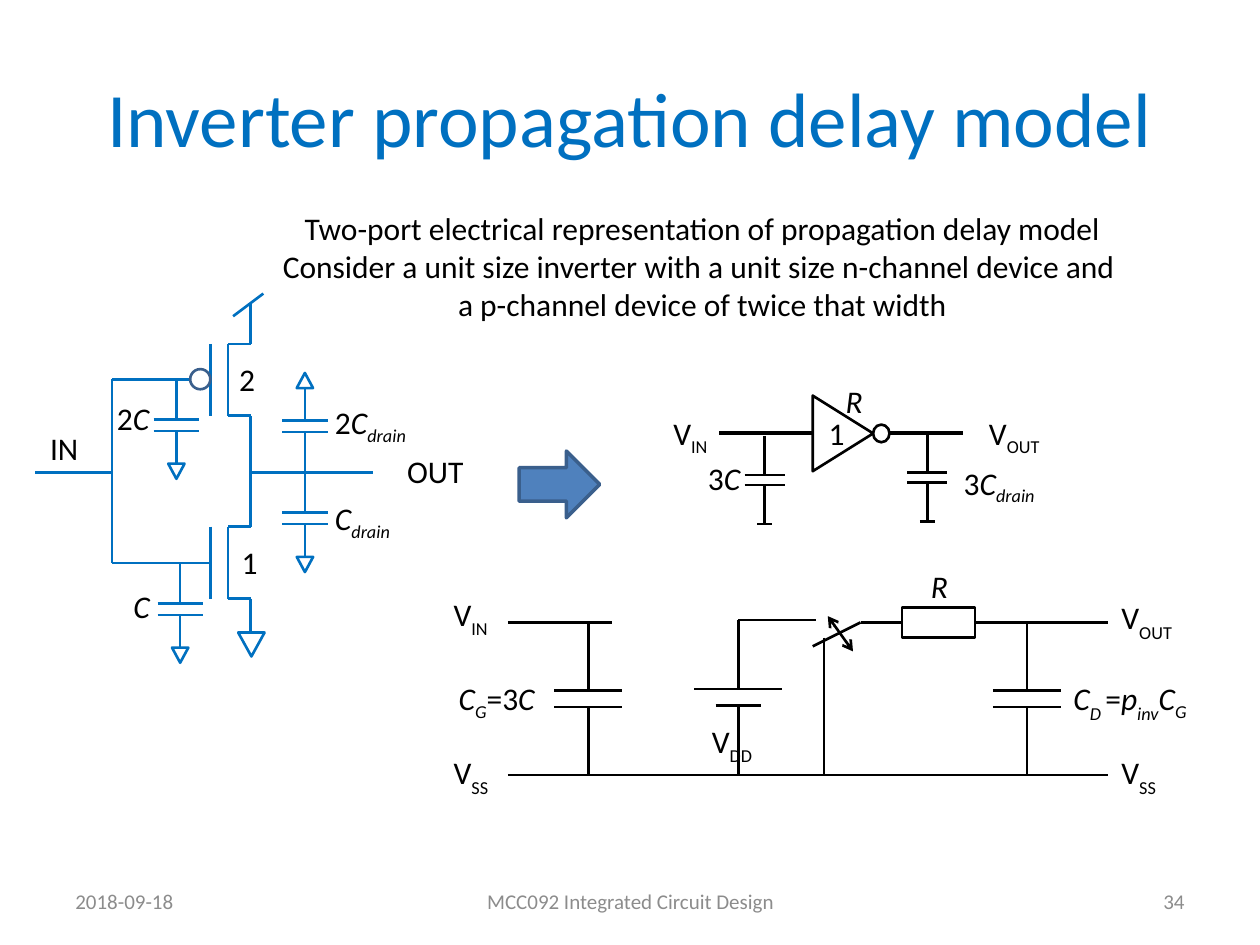
from dataclasses import dataclass
from typing import Any

from lxml import etree
from pptx import Presentation
from pptx import util as u
from pptx.dml.color import RGBColor
from pptx.enum import shapes, text
from pptx.oxml import ns

BLUE, BLACK, WHITE, GREY = "0070C0", "000000", "FFFFFF", "8C8C8C"
ARROW_FILL, ARROW_EDGE = "4F81BD", "3A5F8C"
LEFT, CENTER, RIGHT = text.PP_ALIGN.LEFT, text.PP_ALIGN.CENTER, text.PP_ALIGN.RIGHT
PRESET = shapes.MSO_SHAPE


def color(value):
    """Turn a hex string into a colour."""
    return RGBColor.from_string(value)


def italic(words):
    """Describe an italic run."""
    return words, True, 0


def sub(words, slanted=False, drop=25):
    """Describe a subscript run."""
    return words, slanted, drop


@dataclass
class Region:
    """A part of the slide whose contents are placed from its top left corner."""

    slide: Any
    left: float
    top: float
    ink: str = BLACK

    def at(self, x, y):
        """Return the slide position of a point in the region."""
        return u.Inches(self.left + x), u.Inches(self.top + y)

    def wire(self, x1, y1, x2, y2, width=1.5):
        """Draw a straight wire between two points."""
        wire = self.slide.shapes.add_connector(
            shapes.MSO_CONNECTOR.STRAIGHT, *self.at(x1, y1), *self.at(x2, y2))
        wire.line.color.rgb = color(self.ink)
        wire.line.width = u.Pt(width)
        etree.SubElement(wire._element.spPr, ns.qn("a:effectLst"))
        return wire

    def symbol(self, preset, x, y, width, height, turn=0, fill=WHITE, edge=None, weight=1.5):
        """Draw a filled preset shape."""
        symbol = self.slide.shapes.add_shape(
            preset, *self.at(x, y), u.Inches(width), u.Inches(height))
        symbol.rotation = turn
        symbol.shadow.inherit = False
        symbol.fill.solid()
        symbol.fill.fore_color.rgb = color(fill)
        symbol.line.color.rgb = color(edge or self.ink)
        symbol.line.width = u.Pt(weight)
        return symbol

    def label(self, lines, x, y, width, height=0.4, align=LEFT, pad=0.1, size=18,
              ink=BLACK, anchor=text.MSO_ANCHOR.TOP):
        """Write lines made of plain strings and styled runs."""
        frame = self.slide.shapes.add_textbox(
            *self.at(x, y), u.Inches(width), u.Inches(height)).text_frame
        frame.word_wrap = True
        frame.vertical_anchor = anchor
        frame.margin_left = frame.margin_right = u.Inches(pad)
        frame.margin_top = frame.margin_bottom = u.Inches(pad / 2)
        for index, pieces in enumerate(lines):
            paragraph = frame.add_paragraph() if index else frame.paragraphs[0]
            paragraph.alignment = align
            paragraph.font.size = u.Pt(size)
            paragraph.font.name = "Calibri"
            paragraph.font.color.rgb = color(ink)
            for piece in pieces:
                words, slanted, drop = (piece, False, 0) if isinstance(piece, str) else piece
                run = paragraph.add_run()
                run.text = words
                if slanted:
                    run.font.italic = True
                if drop:
                    run._r.get_or_add_rPr().set("baseline", str(-1000 * drop))

    def capacitor(self, x, y, half, lead, gap, far_half=None, way=1):
        """Draw two plates with leads, starting at y, and return the far end."""
        near, far = y + way * lead, y + way * (lead + gap)
        end = far + way * lead
        far_half = far_half or half
        self.wire(x - half, near, x + half, near)
        self.wire(x - far_half, far, x + far_half, far)
        self.wire(x, y, x, near)
        self.wire(x, far, x, end)
        return end

    def grounded_capacitor(self, x, y, way=1):
        """Draw a capacitor that ends in a triangle."""
        end = self.capacitor(x, y, 0.18, 0.32, 0.09, way=way)
        self.symbol(PRESET.ISOSCELES_TRIANGLE, x - 0.065, end - 0.06, 0.13, 0.12,
                    turn=180 if way > 0 else 0)

    def load_capacitor(self, x, y):
        """Draw a capacitor that ends in a short bar."""
        end = self.capacitor(x, y, 0.16, 0.31, 0.08)
        self.wire(x - 0.06, end, x + 0.06, end)

    def transistor(self, y):
        """Draw the gate, the channel and the two terminals of a device."""
        for x in (1.39, 1.53):
            self.wire(x, y, x, y + 0.57)
        for terminal in (y, y + 0.57):
            self.wire(1.53, terminal, 1.71, terminal)


def add_title(slide, left, top, width, height):
    """Place and format the title."""
    title = slide.shapes.title
    title.left, title.top = u.Inches(left), u.Inches(top)
    title.width, title.height = u.Inches(width), u.Inches(height)
    title.text_frame.text = "Inverter propagation delay model"
    title.text_frame.vertical_anchor = text.MSO_ANCHOR.MIDDLE
    heading = title.text_frame.paragraphs[0]
    heading.alignment = CENTER
    heading.font.size = u.Pt(44)
    heading.font.name = "Calibri"
    heading.font.color.rgb = color(BLUE)


def add_footer(slide, left, top):
    """Write the date, the course and the page number."""
    footer = Region(slide, left, top)
    for words, x, width, align in (
            ("2018-09-18", 0, 2.33, LEFT),
            ("MCC092 Integrated Circuit Design", 2.92, 3.17, CENTER),
            ("34", 6.67, 2.33, RIGHT)):
        footer.label([[words]], x, 0, width, align=align, size=12, ink=GREY,
                     anchor=text.MSO_ANCHOR.MIDDLE)


def add_intro(slide, left, top):
    """Write the three introductory lines."""
    Region(slide, left, top).label([
        ["Two-port electrical representation of propagation delay model"],
        ["Consider a unit size inverter with a unit size n-channel device and "],
        ["a p-channel device of twice that width"],
    ], 0, 0, 6.89, 0.91, CENTER, pad=0)


def add_cmos_inverter(slide, left, top):
    """Draw the inverter at transistor level."""
    cmos = Region(slide, left, top, BLUE)
    for y in (0.4, 1.85):
        cmos.transistor(y)
    for ends in ((1.57, 0.18, 1.81, 0), (1.71, 0.08, 1.71, 0.4), (1.71, 0.97, 1.71, 1.85),
                 (1.71, 2.42, 1.71, 2.81), (0.61, 0.68, 1.39, 0.68), (0.61, 2.14, 1.39, 2.14),
                 (0.61, 0.68, 0.61, 2.14), (0, 1.42, 0.61, 1.42), (1.71, 1.42, 2.68, 1.42)):
        cmos.wire(*ends)
    cmos.symbol(PRESET.ISOSCELES_TRIANGLE, 1.61, 2.69, 0.21, 0.19, turn=180)
    cmos.symbol(PRESET.OVAL, 1.23, 0.6, 0.16, 0.16, edge=ARROW_EDGE)
    for x, y, way in ((1.15, 2.14, 1), (1.12, 0.68, 1), (2.14, 1.42, 1), (2.14, 1.42, -1)):
        cmos.grounded_capacitor(x, y, way)
    drain = [italic("C"), sub("drain", True)]
    cmos.label([["IN"]], -0.07, 1.03, 0.6, align=CENTER)
    cmos.label([["OUT"]], 2.78, 1.21, 0.79, align=CENTER)
    for pieces, x, y in ((["2"], 1.52, 0.48), (["1"], 1.54, 1.93),
                         (["2", italic("C")], 0.55, 0.79), ([italic("C")], 0.68, 2.28),
                         (["2", *drain], 2.28, 0.82), (drain, 2.28, 1.58)):
        cmos.label([pieces], x, y, 0.95)


def add_step_arrow(slide, left, top):
    """Draw the block arrow from the circuit to its models."""
    Region(slide, left, top).symbol(PRESET.RIGHT_ARROW, 0, 0, 0.64, 0.53,
                                    fill=ARROW_FILL, edge=ARROW_EDGE, weight=2)


def add_gate_model(slide, left, top):
    """Draw the logic symbol with its input and output loads."""
    gate = Region(slide, left, top)
    gate.wire(0.55, 0.41, 2.48, 0.41, 2.25)
    gate.symbol(PRESET.ISOSCELES_TRIANGLE, 1.23, 0.17, 0.6, 0.48, turn=90)
    gate.symbol(PRESET.OVAL, 1.77, 0.34, 0.13, 0.14)
    gate.load_capacitor(2.2, 0.41)
    gate.load_capacitor(0.91, 0.43)
    for pieces, x, y in ((["V", sub("IN")], -0.08, 0.21), (["V", sub("OUT")], 2.49, 0.21),
                         (["1"], 1.08, 0.21), ([italic("R")], 1.22, -0.05)):
        gate.label([pieces], x, y, 0.8, align=CENTER)
    gate.label([["3", italic("C")]], 0.36, 0.56, 0.55)
    gate.label([["3", italic("C"), sub("drain", True)]], 2.39, 0.6, 0.96)


def add_rc_model(slide, left, top):
    """Draw the two-port model with switch, supply and resistor."""
    model = Region(slide, left, top)
    model.capacitor(4.55, 0.44, 0.27, 0.54, 0.13)
    model.capacitor(1.07, 0.44, 0.27, 0.54, 0.13)
    model.capacitor(2.26, 0.42, 0.35, 0.55, 0.13, far_half=0.18)
    for ends in ((0.43, 1.65, 5.19, 1.65), (0.43, 0.44, 1.26, 0.44), (2.26, 0.42, 2.88, 0.42),
                 (2.94, 0.56, 2.94, 1.65), (3.23, 0.44, 2.85, 0.63)):
        model.wire(*ends)
    resistor = model.symbol(PRESET.RECTANGLE, 3.56, 0.32, 0.58, 0.24)
    model.wire(3.23, 0.44, 3.56, 0.44).end_connect(resistor, 1)
    model.wire(4.14, 0.44, 5.19, 0.44).begin_connect(resistor, 3)
    throw = model.wire(2.97, 0.39, 3.17, 0.67)
    for end in ("headEnd", "tailEnd"):
        etree.SubElement(throw.line._get_or_add_ln(), ns.qn("a:" + end), type="arrow")
    for name, x, y in (("IN", 0, 0.22), ("SS", 0, 1.48), ("OUT", 5.3, 0.25),
                       ("SS", 5.3, 1.48), ("DD", 2.05, 1.23)):
        model.label([["V", sub(name, drop=30)]], x, y, 0.6, pad=0)
    model.label([[italic("R")]], 3.41, 0, 0.89, align=CENTER, pad=0)
    gate_load = [italic("C"), sub("G", True)]
    model.label([[*gate_load, "=3", italic("C")]], 0.04, 0.89, 0.97, pad=0)
    model.label([[italic("C"), sub("D ", True, 30), "=", italic("p"), sub("inv", True, 30),
                  *gate_load]], 4.92, 0.89, 1.13, pad=0)


def main():
    """Build and save the slide."""
    deck = Presentation()
    deck.slide_width, deck.slide_height = u.Inches(10), u.Inches(7.5)
    slide = deck.slides.add_slide(deck.slide_layouts[5])
    add_title(slide, 0.5, 0.3, 9, 1.25)
    add_footer(slide, 0.5, 6.95)
    add_intro(slide, 2.13, 1.66)
    add_rc_model(slide, 3.6, 4.5)
    add_cmos_inverter(slide, 0.28, 2.33)
    add_step_arrow(slide, 4.12, 3.58)
    add_gate_model(slide, 5.16, 3.03)
    deck.save("out.pptx")


if __name__ == "__main__":
    main()
